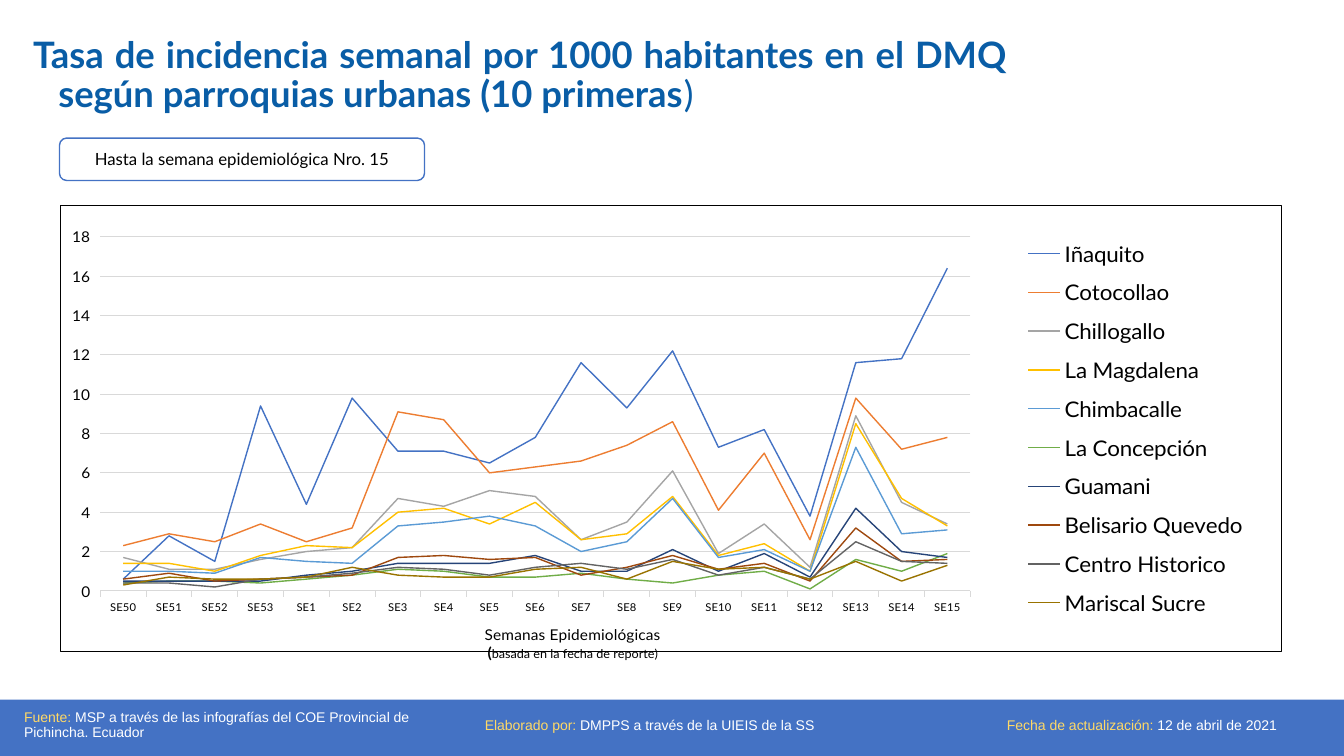
"""Builds the weekly incidence rate slide for the urban parishes of the DMQ."""
from dataclasses import dataclass

from pptx import Presentation
from pptx.chart.data import CategoryChartData
from pptx.dml.color import RGBColor
from pptx.enum.chart import XL_CHART_TYPE, XL_LEGEND_POSITION, XL_TICK_MARK
from pptx.enum.shapes import MSO_SHAPE
from pptx.enum.text import MSO_ANCHOR, PP_ALIGN
from pptx.oxml import parse_xml
from pptx.oxml.ns import nsdecls
from pptx.util import Inches, Pt

LINE_CHART = XL_CHART_TYPE.LINE
LEGEND_BOTTOM = XL_LEGEND_POSITION.BOTTOM
TICK_OUT, TICK_NONE = XL_TICK_MARK.OUTSIDE, XL_TICK_MARK.NONE
RECT, ROUND_RECT = MSO_SHAPE.RECTANGLE, MSO_SHAPE.ROUNDED_RECTANGLE
TOP, MIDDLE = MSO_ANCHOR.TOP, MSO_ANCHOR.MIDDLE
LEFT, CENTER, JUSTIFY = PP_ALIGN.LEFT, PP_ALIGN.CENTER, PP_ALIGN.JUSTIFY

BLUE = RGBColor(0x44, 0x72, 0xC4)
TITLE_BLUE = RGBColor(0x09, 0x5D, 0xA6)
YELLOW = RGBColor(0xFF, 0xD9, 0x66)
WHITE = RGBColor(0xFF, 0xFF, 0xFF)
BLACK = RGBColor(0x00, 0x00, 0x00)
GRID_GRAY = RGBColor(0xD9, 0xD9, 0xD9)
ORANGE = RGBColor(0xED, 0x7D, 0x31)
GRAY = RGBColor(0xA5, 0xA5, 0xA5)
GOLD = RGBColor(0xFF, 0xC0, 0x00)
SKY = RGBColor(0x5B, 0x9B, 0xD5)
GREEN = RGBColor(0x70, 0xAD, 0x47)
NAVY = RGBColor(0x26, 0x44, 0x78)
BROWN = RGBColor(0x9E, 0x48, 0x0E)
DARK_GRAY = RGBColor(0x63, 0x63, 0x63)
OLIVE = RGBColor(0x99, 0x73, 0x00)


@dataclass
class Run:
    text: str
    size: float
    font: str
    color: RGBColor
    bold: bool = False


@dataclass
class TextBox:
    box: tuple[float, float, float, float]
    runs: list[Run]
    anchor: MSO_ANCHOR = MIDDLE
    align: PP_ALIGN = LEFT
    hanging: bool = False


@dataclass
class Parish:
    name: str
    color: RGBColor
    rates: list[float]


def footer_runs(label: str, detail: str) -> list[Run]:
    return [Run(label, 10, "Arial", YELLOW), Run(detail, 10, "Arial", WHITE)]


TEXTS = [
    TextBox((0.23, 0.32, 9.87, 0.81), [
        Run("Tasa de incidencia semanal por 1000 habitantes en el DMQ según "
            "parroquias urbanas (10 primeras", 26, "Lato", TITLE_BLUE, True),
        Run(")", 26, "Lato", TITLE_BLUE)], TOP, JUSTIFY, True),
    TextBox((0.14, 6.93, 4.32, 0.54), footer_runs(
        "Fuente: ", "MSP a través de las infografías del COE Provincial de Pichincha. Ecuador")),
    TextBox((4.71, 6.93, 4.32, 0.54), footer_runs(
        "Elaborado por: ", "DMPPS a través de la UIEIS de la SS")),
    TextBox((9.63, 6.93, 3.39, 0.55), footer_runs(
        "Fecha de actualización: ", "12 de abril de 2021"), align=CENTER, hanging=True),
]

WEEKS = [f"SE{n}" for n in [*range(50, 54), *range(1, 16)]]
PARISHES = [
    Parish("Iñaquito", BLUE, [0.6, 2.8, 1.5, 9.4, 4.4, 9.8, 7.1, 7.1, 6.5, 7.8,
                              11.6, 9.3, 12.2, 7.3, 8.2, 3.8, 11.6, 11.8, 16.4]),
    Parish("Cotocollao", ORANGE, [2.3, 2.9, 2.5, 3.4, 2.5, 3.2, 9.1, 8.7, 6, 6.3,
                                  6.6, 7.4, 8.6, 4.1, 7, 2.6, 9.8, 7.2, 7.8]),
    Parish("Chillogallo", GRAY, [1.7, 1.1, 1.1, 1.6, 2, 2.2, 4.7, 4.3, 5.1, 4.8,
                                 2.6, 3.5, 6.1, 1.9, 3.4, 1.2, 8.9, 4.5, 3.4]),
    Parish("La Magdalena", GOLD, [1.4, 1.4, 1, 1.8, 2.3, 2.2, 4, 4.2, 3.4, 4.5,
                                  2.6, 2.9, 4.8, 1.8, 2.4, 1, 8.5, 4.7, 3.3]),
    Parish("Chimbacalle", SKY, [1, 1, 0.9, 1.7, 1.5, 1.4, 3.3, 3.5, 3.8, 3.3,
                                2, 2.5, 4.7, 1.7, 2.1, 1, 7.3, 2.9, 3.1]),
    Parish("La Concepción", GREEN, [0.4, 0.5, 0.5, 0.4, 0.6, 0.8, 1.1, 1, 0.7, 0.7,
                                    0.9, 0.6, 0.4, 0.8, 1, 0.1, 1.6, 1, 1.9]),
    Parish("Guamani", NAVY, [0.5, 0.5, 0.5, 0.5, 0.8, 1, 1.4, 1.4, 1.4, 1.8,
                             1, 1, 2.1, 1, 1.9, 0.7, 4.2, 2, 1.7]),
    Parish("Belisario Quevedo", BROWN, [0.6, 0.9, 0.5, 0.6, 0.7, 0.8, 1.7, 1.8, 1.6, 1.7,
                                        0.8, 1.2, 1.8, 1.1, 1.4, 0.5, 3.2, 1.5, 1.6]),
    Parish("Centro Historico", DARK_GRAY, [0.4, 0.4, 0.2, 0.6, 0.7, 0.9, 1.2, 1.1, 0.8, 1.2,
                                           1.4, 1.1, 1.6, 0.8, 1.2, 0.6, 2.5, 1.5, 1.4]),
    Parish("Mariscal Sucre", OLIVE, [0.3, 0.7, 0.6, 0.6, 0.7, 1.2, 0.8, 0.7, 0.7, 1.1,
                                     1.2, 0.6, 1.5, 1.1, 1.2, 0.6, 1.5, 0.5, 1.3]),
]


def style_font(font, size: float, name: str, color: RGBColor, bold: bool = False) -> None:
    font.size, font.name, font.bold = Pt(size), name, bold
    font.color.rgb = color


def add_runs(p, runs: list[Run]) -> None:
    for run in runs:
        r = p.add_run()
        r.text = run.text
        style_font(r.font, run.size, run.font, run.color, run.bold)


def add_text(slide, item: TextBox) -> None:
    tf = slide.shapes.add_textbox(*map(Inches, item.box)).text_frame
    tf.word_wrap, tf.vertical_anchor = True, item.anchor
    p = tf.paragraphs[0]
    p.alignment, p.line_spacing = item.align, 0.9
    if item.hanging:
        pPr = p._p.get_or_add_pPr()
        pPr.set("marL", str(Inches(0.25)))
        pPr.set("indent", str(-Inches(0.25)))
    add_runs(p, item.runs)


def add_block(slide, kind: MSO_SHAPE, box: tuple, fill: RGBColor | None = None):
    sp = slide.shapes.add_shape(kind, *map(Inches, box))
    sp.shadow.inherit = False
    if fill is None:
        sp.fill.background()
        sp.line.color.rgb, sp.line.width = BLUE, Pt(1)
    else:
        sp.fill.solid()
        sp.fill.fore_color.rgb = fill
        sp.line.fill.background()
    return sp


def set_layout(parent, index: int, target: str = "", **place: float) -> None:
    for old in parent.xpath("c:layout"):
        parent.remove(old)
    inner = f'<c:layoutTarget val="{target}"/>' if target else ""
    inner += "".join(f'<c:{k}Mode val="edge"/>' for k in "xy")
    inner += "".join(f'<c:{k} val="{v}"/>' for k, v in place.items())
    parent.insert(index, parse_xml(
        f'<c:layout {nsdecls("c")}><c:manualLayout>{inner}</c:manualLayout></c:layout>'))


def style_axes(chart) -> None:
    weeks, rates = chart.category_axis, chart.value_axis
    weeks.major_tick_mark, rates.major_tick_mark = TICK_OUT, TICK_OUT
    weeks.minor_tick_mark = rates.minor_tick_mark = TICK_NONE
    style_font(weeks.tick_labels.font, 8, "Lato", BLACK)
    style_font(rates.tick_labels.font, 11, "Lato", BLACK)
    rates.minimum_scale, rates.maximum_scale, rates.major_unit = 0, 18, 2
    rates.has_major_gridlines = True
    rates.format.line.fill.background()
    for line in (weeks.format.line, rates.major_gridlines.format.line):
        line.color.rgb, line.width = GRID_GRAY, Pt(0.75)
    title = weeks.axis_title
    tf = title.text_frame
    add_runs(tf.paragraphs[0], [Run("Semanas Epidemiológicas", 11, "Lato", BLACK)])
    add_runs(tf.add_paragraph(), [Run("(", 11, "Lato", BLACK, True),
                                  Run("basada en la fecha de reporte)", 9, "Lato", BLACK)])
    set_layout(title._element, 1, x=0.345, y=0.93)


def add_rate_chart(slide) -> None:
    data = CategoryChartData()
    data.categories = WEEKS
    for parish in PARISHES:
        data.add_series(parish.name, parish.rates)
    box = map(Inches, (0.59, 2.03, 12.13, 4.58))
    chart = slide.shapes.add_chart(LINE_CHART, *box, data).chart
    style_font(chart.font, 10, "Quicksand", BLACK)
    chart.has_title = False
    for series, parish in zip(chart.plots[0].series, PARISHES):
        series.smooth = False
        series.format.line.color.rgb, series.format.line.width = parish.color, Pt(1)
    style_axes(chart)
    chart.has_legend = True
    chart.legend.position, chart.legend.include_in_layout = LEGEND_BOTTOM, False
    style_font(chart.legend.font, 16, "Lato", BLACK)
    set_layout(chart.legend._element, 1, x=0.78, y=0.05, w=0.2, h=0.9)
    space = chart._chartSpace
    set_layout(space.xpath("c:chart/c:plotArea")[0], 0, "inner", x=0.033, y=0.071, w=0.712, h=0.794)
    space.xpath("c:chart")[0].addnext(parse_xml(
        f'<c:spPr {nsdecls("c", "a")}><a:solidFill><a:srgbClr val="{WHITE}"/></a:solidFill>'
        f'<a:ln w="{Pt(0.75)}"><a:solidFill><a:srgbClr val="{BLACK}"/></a:solidFill></a:ln></c:spPr>'))


def main() -> None:
    prs = Presentation()
    prs.slide_width, prs.slide_height = Inches(13.33), Inches(7.5)
    slide = prs.slides.add_slide(prs.slide_layouts[6])
    add_block(slide, RECT, (0, 6.94, 13.33, 0.56), BLUE)
    for item in TEXTS:
        add_text(slide, item)
    tf = add_block(slide, ROUND_RECT, (0.59, 1.37, 3.62, 0.42)).text_frame
    tf.word_wrap, tf.vertical_anchor = True, MIDDLE
    tf.paragraphs[0].alignment = CENTER
    add_runs(tf.paragraphs[0], [Run("Hasta la semana epidemiológica Nro. 15", 12, "Lato", BLACK)])
    add_rate_chart(slide)
    prs.save("out.pptx")


if __name__ == "__main__":
    main()
